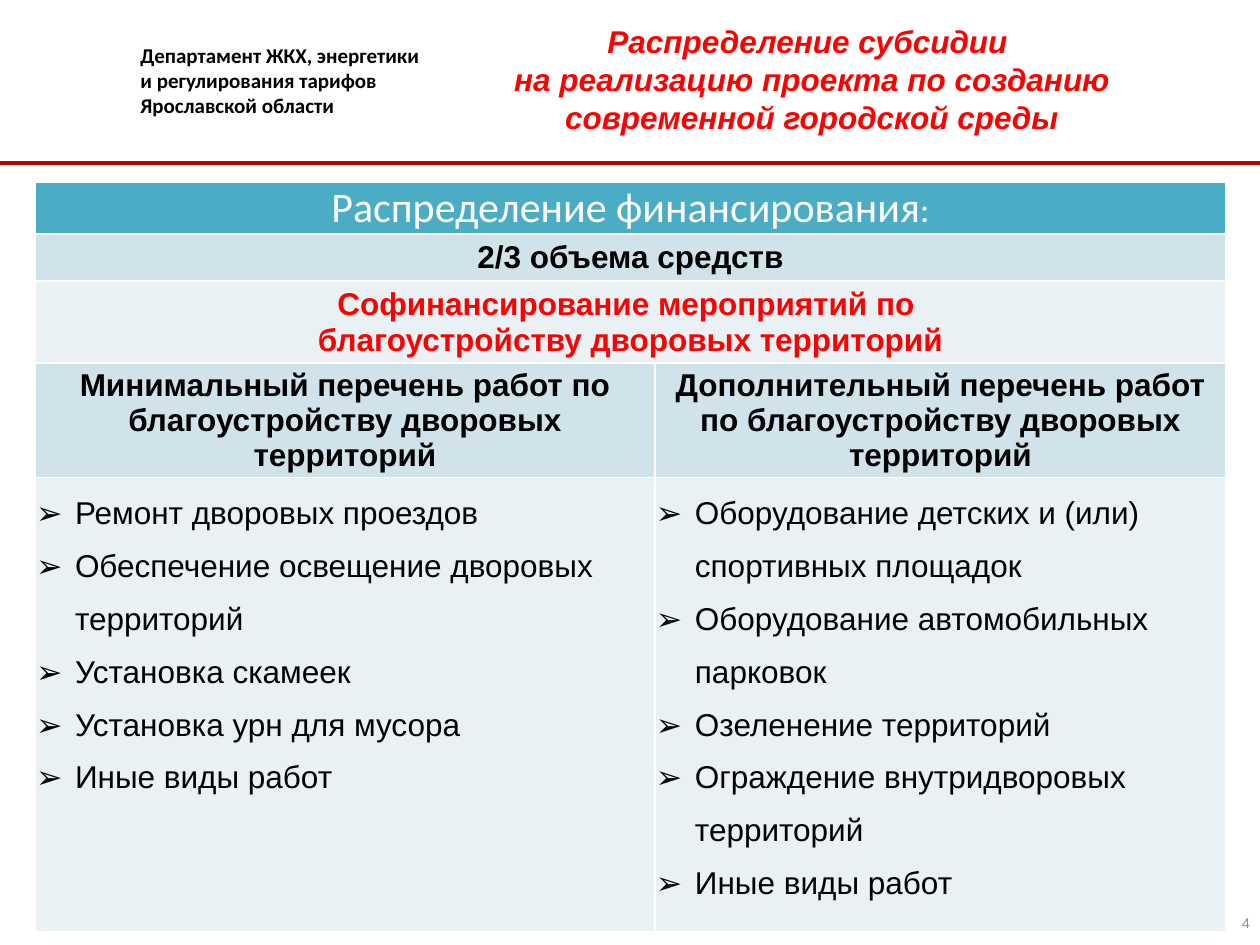
from lxml import etree
from pptx import Presentation
from pptx.dml.color import RGBColor
from pptx.enum.shapes import MSO_CONNECTOR, MSO_SHAPE
from pptx.enum.text import MSO_ANCHOR, PP_ALIGN
from pptx.oxml.ns import qn
from pptx.util import Pt

PX = 7257
LEFT, CENTER, RIGHT = PP_ALIGN.LEFT, PP_ALIGN.CENTER, PP_ALIGN.RIGHT
TOP, MIDDLE = MSO_ANCHOR.TOP, MSO_ANCHOR.MIDDLE
BLACK = RGBColor(0x00, 0x00, 0x00)
WHITE = RGBColor(0xFF, 0xFF, 0xFF)
RED = RGBColor(0xFF, 0x00, 0x00)
DARK_RED = RGBColor(0xC0, 0x00, 0x00)
GRAY = RGBColor(0x89, 0x89, 0x89)
TEAL = RGBColor(0x4B, 0xAC, 0xC6)
BLUE_BAND = RGBColor(0xD0, 0xE3, 0xEA)
PALE_BAND = RGBColor(0xE9, 0xF1, 0xF5)


def write(paragraph, text, size=18, color=BLACK, font="Arial", bold=False,
          italic=False, align=CENTER, bullet=None):
    paragraph.alignment = align
    if bullet:
        paragraph.line_spacing = 1.5
        properties = paragraph._p.get_or_add_pPr()
        properties.set("marL", str(39 * PX))
        properties.set("indent", str(-39 * PX))
        etree.SubElement(properties, qn("a:buFont")).set("typeface", "Arial")
        etree.SubElement(properties, qn("a:buChar")).set("char", bullet)
    for index, line in enumerate(text.split("\n")):
        if index:
            paragraph.add_line_break()
        run = paragraph.add_run()
        run.text = line
        run.font.name = font
        run.font.size = Pt(size)
        run.font.bold = bold
        run.font.italic = italic
        run.font.color.rgb = color


def style_cell(cell, fill, anchor):
    cell.fill.solid()
    cell.fill.fore_color.rgb = fill
    cell.vertical_anchor = anchor
    cell.margin_left = cell.margin_right = cell.margin_top = PX
    cell.margin_bottom = 0
    properties = cell._tc.get_or_add_tcPr()
    for index, side in enumerate(("lnL", "lnR", "lnT", "lnB")):
        border = etree.Element(qn(f"a:{side}"), w="12700")
        solid = etree.SubElement(border, qn("a:solidFill"))
        etree.SubElement(solid, qn("a:srgbClr")).set("val", str(WHITE))
        properties.insert(index, border)


presentation = Presentation()
presentation.slide_width = 1260 * PX
presentation.slide_height = 945 * PX
slide = presentation.slides.add_slide(presentation.slide_layouts[6])
shapes = slide.shapes

department = shapes.add_shape(MSO_SHAPE.RECTANGLE, 128 * PX, 35 * PX, 307 * PX, 90 * PX)
department.shadow.inherit = False
department.fill.solid()
department.fill.fore_color.rgb = WHITE
department.line.fill.background()
frame = department.text_frame
frame.word_wrap = True
frame.vertical_anchor = MIDDLE
write(frame.paragraphs[0], "Департамент ЖКХ, энергетики и регулирования тарифов",
      size=12, font="Calibri", bold=True, align=LEFT)
write(frame.add_paragraph(), "Ярославской области",
      size=12, font="Calibri", bold=True, align=LEFT)

rule = shapes.add_connector(MSO_CONNECTOR.STRAIGHT, -3 * PX, 163 * PX, 1263 * PX, 163 * PX)
rule.line.color.rgb = DARK_RED
rule.line.width = Pt(2.5)
etree.SubElement(rule._element.spPr, qn("a:effectLst"))

title = shapes.add_textbox(378 * PX, 14 * PX, 868 * PX, 112 * PX)
frame = title.text_frame
frame.word_wrap = True
frame.margin_top = 8 * PX
write(frame.paragraphs[0],
      "Распределение субсидии \nна реализацию проекта по созданию\nсовременной городской среды",
      color=RED, bold=True, italic=True)

column_widths = [620, 571]
row_heights = [52, 47, 82, 114, 449]
row_fills = [TEAL, BLUE_BAND, PALE_BAND, BLUE_BAND, PALE_BAND]
table = shapes.add_table(len(row_heights), len(column_widths), 35 * PX, 182 * PX,
                         sum(column_widths) * PX, sum(row_heights) * PX).table
for column, width in zip(table.columns, column_widths):
    column.width = width * PX
for index, (height, fill) in enumerate(zip(row_heights, row_fills)):
    table.rows[index].height = height * PX
    for cell in table.rows[index].cells:
        style_cell(cell, fill, TOP if index == 4 else MIDDLE)
for index in range(3):
    table.cell(index, 0).merge(table.cell(index, 1))

heading = table.cell(0, 0).text_frame.paragraphs[0]
write(heading, "Распределение финансирования", size=24, color=WHITE, font="Calibri")
write(heading, ":", size=20, color=WHITE, font="Calibri")
write(table.cell(1, 0).text_frame.paragraphs[0], "2/3 объема средств", bold=True)
frame = table.cell(2, 0).text_frame
write(frame.paragraphs[0], "Софинансирование мероприятий по ", color=RED, bold=True)
write(frame.add_paragraph(), "благоустройству дворовых территорий", color=RED, bold=True)

work_lists = [
    ("Минимальный перечень работ по благоустройству дворовых территорий", [
        "Ремонт дворовых проездов",
        "Обеспечение освещение дворовых территорий",
        "Установка скамеек",
        "Установка урн для мусора",
        "Иные виды работ",
    ]),
    ("Дополнительный перечень работ по благоустройству дворовых территорий", [
        "Оборудование детских и (или) спортивных площадок",
        "Оборудование автомобильных парковок",
        "Озеленение территорий",
        "Ограждение внутридворовых территорий",
        "Иные виды работ",
    ]),
]
for column, (list_name, works) in enumerate(work_lists):
    write(table.cell(3, column).text_frame.paragraphs[0], list_name, bold=True)
    frame = table.cell(4, column).text_frame
    for index, work in enumerate(works):
        paragraph = frame.add_paragraph() if index else frame.paragraphs[0]
        write(paragraph, work, align=LEFT, bullet="➢")

page_number = shapes.add_textbox(1205 * PX, 910 * PX, 50 * PX, 26 * PX)
frame = page_number.text_frame
frame.word_wrap = True
frame.vertical_anchor = MIDDLE
frame.margin_left = frame.margin_right = frame.margin_top = frame.margin_bottom = 5 * PX
write(frame.paragraphs[0], "4", size=8, color=GRAY, align=RIGHT)

presentation.save("out.pptx")
